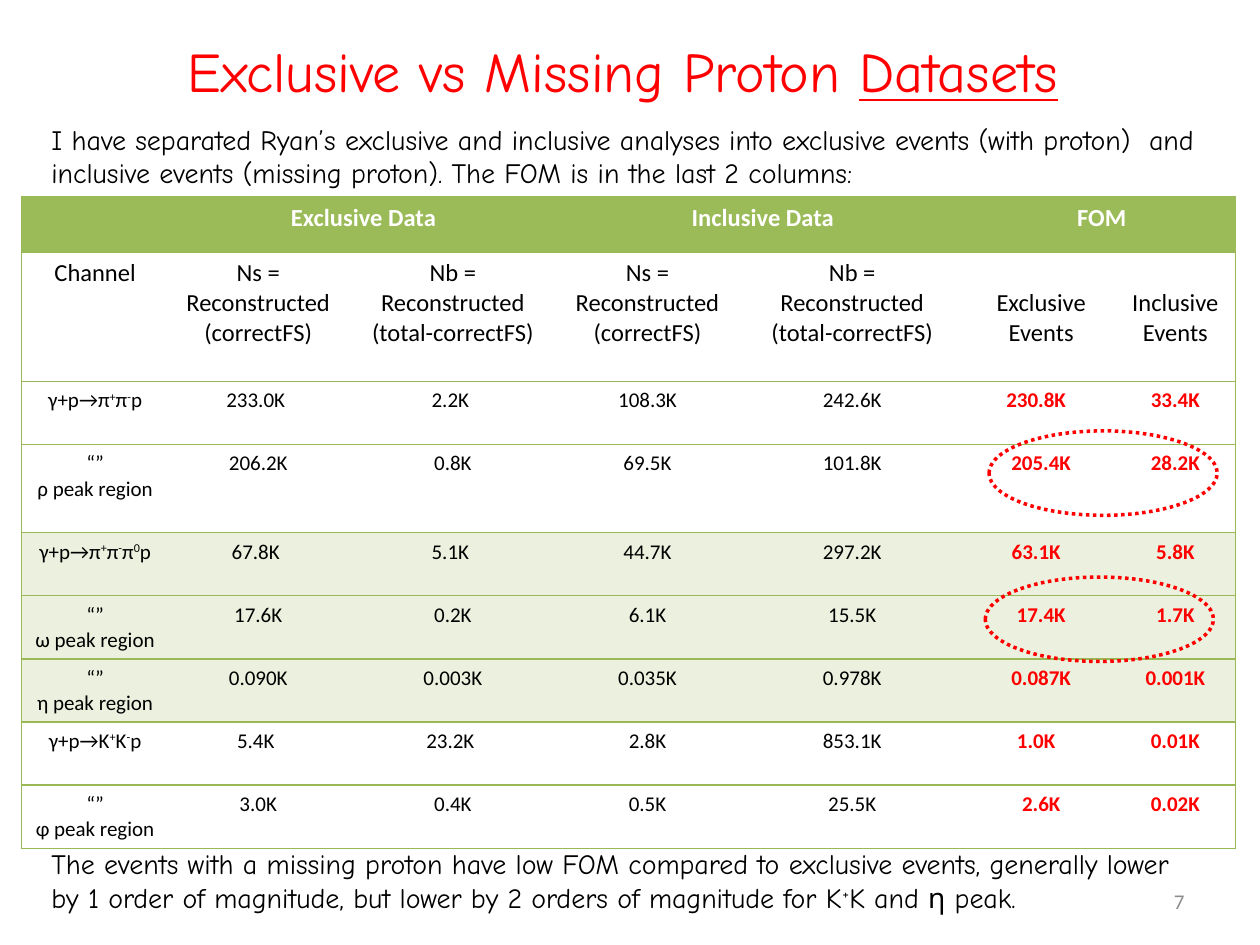
import dataclasses
import pptx
import pptx.dml.color
import pptx.enum.dml
import pptx.enum.shapes
import pptx.enum.text
import pptx.oxml
import pptx.oxml.ns
import pptx.util

ALIGN = pptx.enum.text.PP_ALIGN
ANCHOR = pptx.enum.text.MSO_ANCHOR
PLAIN_STYLE = "{2D5ABB26-0587-4C30-8999-92F81FD0307C}"
CELL = 0.1  # inches: the slide is a grid of 100 columns by 75 rows


@dataclasses.dataclass(frozen=True)
class Theme:
    red: str = "FF0000"
    black: str = "000000"
    white: str = "FFFFFF"
    gray: str = "8C8C8C"
    head: str = "9BBB59"
    band: str = "EBF1DE"
    rule: str = "98B955"
    script: str = "Comic Neue"
    sans: str = "Calibri"
    title: int = 32
    body: int = 16
    label: int = 14
    small: int = 12


THEME = Theme()

WIDTHS = [11.7, 14.2, 16.7, 14.2, 18.3, 11.7, 9.6]
HEIGHTS = [4.4, 10.3, 5, 7, 5, 5, 5, 5, 5]
GROUPS = ["", "Exclusive Data", "Inclusive Data", "FOM"]
SIGNAL = "Ns =\nReconstructed\n(correctFS)"
NOISE = "Nb =\nReconstructed\n(total-correctFS)"
LABELS = ["Channel", SIGNAL, NOISE, SIGNAL, NOISE,
          "Exclusive Events", "Inclusive Events"]
DATA = [
    ["γ+p→π^+^π^-^p", "233.0K", "2.2K", "108.3K", "242.6K", "230.8K", "33.4K"],
    ["“”\nρ peak region", "206.2K", "0.8K", "69.5K", "101.8K", "205.4K", "28.2K"],
    ["γ+p→π^+^π^-^π^0^p", "67.8K", "5.1K", "44.7K", "297.2K", "63.1K", "5.8K"],
    ["“”\nω peak region", "17.6K", "0.2K", "6.1K", "15.5K", "17.4K", "1.7K"],
    ["“”\nη peak region", "0.090K", "0.003K", "0.035K", "0.978K", "0.087K", "0.001K"],
    ["γ+p→K^+^K^-^p", "5.4K", "23.2K", "2.8K", "853.1K", "1.0K", "0.01K"],
    ["“”\nφ peak region", "3.0K", "0.4K", "0.5K", "25.5K", "2.6K", "0.02K"],
]
BANDED = range(4, 7)
FOM_COL = 5
NUDGES = {1: 0.4, 2: 0.4, 5: 0.8}  # extra right inset in channel rows


def units(*counts):
    return [pptx.util.Inches(count * CELL) for count in counts]


def color(code):
    return pptx.dml.color.RGBColor.from_string(code)


def write(frame, text, size, ink, face, align=ALIGN.LEFT, bold=False):
    """Fill a frame, one paragraph a line; every second ^ part is raised."""
    for row, line in enumerate(text.split("\n")):
        para = frame.add_paragraph() if row else frame.paragraphs[0]
        para.alignment = align
        for part, words in enumerate(line.split("^")):
            run = para.add_run()
            run.text = words
            font = run.font
            font.size, font.name, font.bold = pptx.util.Pt(size), face, bold
            font.color.rgb = color(ink)
            if part % 2:
                run._r.get_or_add_rPr().set("baseline", "30000")


def place_text(slide, box, text, size, ink, face, align=ALIGN.LEFT,
               anchor=ANCHOR.TOP):
    frame = slide.shapes.add_textbox(*units(*box)).text_frame
    frame.word_wrap = True
    frame.vertical_anchor = anchor
    write(frame, text, size, ink, face, align)
    return frame


def place_title(slide, box):
    frame = place_text(slide, box, "Exclusive vs Missing Proton ", THEME.title,
                       THEME.red, THEME.script, ALIGN.CENTER, ANCHOR.MIDDLE)
    run = frame.paragraphs[0].add_run()
    run.text = "Datasets"
    run.font.size, run.font.name = pptx.util.Pt(THEME.title), THEME.script
    run.font.color.rgb = color(THEME.red)
    run.font.underline = True


def rule_cell(cell, sides):
    """Draw the named sides of a cell and hide the others."""
    props = cell._tc.get_or_add_tcPr()
    for side in "LRTB":
        fill = (f'<a:solidFill><a:srgbClr val="{THEME.rule}"/></a:solidFill>'
                if side in sides else "<a:noFill/>")
        props.append(pptx.oxml.parse_xml(
            f'<a:ln{side} {pptx.oxml.ns.nsdecls("a")} w="9525">{fill}</a:ln{side}>'))


def style_cell(cell, row, col):
    ends = {0: "L", len(WIDTHS) - 1: "R"}
    rule_cell(cell, "TB" + ends.get(col, ""))
    cell.fill.solid()
    shade = THEME.head if row == 0 else THEME.band if row in BANDED else THEME.white
    cell.fill.fore_color.rgb = color(shade)


def fill_cell(cell, row, col, text):
    size, ink, bold = THEME.small, THEME.black, False
    if row == 0:
        size, ink, bold = THEME.label, THEME.white, True
    elif row == 1:
        size = THEME.label
        if col >= FOM_COL:
            cell.margin_top = pptx.util.Inches(0.29)
    else:
        if col >= FOM_COL:
            ink, bold = THEME.red, True
        if "^" in DATA[row - 2][0] and col in NUDGES:
            cell.margin_right = units(1 + NUDGES[col])[0]
    write(cell.text_frame, text, size, ink, THEME.sans, ALIGN.CENTER, bold)


def place_table(slide, box):
    shape = slide.shapes.add_table(len(HEIGHTS), len(WIDTHS), *units(*box))
    table = shape.table
    table.first_row = table.horz_banding = False
    table._tbl.tblPr.find(pptx.oxml.ns.qn("a:tableStyleId")).text = PLAIN_STYLE
    for line, width in zip(table.columns, units(*WIDTHS)):
        line.width = width
    for line, height in zip(table.rows, units(*HEIGHTS)):
        line.height = height

    heads = [""] * len(WIDTHS)
    heads[1::2] = GROUPS[1:]
    for row, texts in enumerate([heads, LABELS] + DATA):
        for col, text in enumerate(texts):
            cell = table.cell(row, col)
            style_cell(cell, row, col)
            if text:
                fill_cell(cell, row, col, text)
    for col in range(1, len(WIDTHS), 2):
        table.cell(0, col).merge(table.cell(0, col + 1))


def place_rings(slide, box):
    """Circle the FOM pairs of the ρ and ω rows of the table in box."""
    left, top = box[:2]
    for across, down in [(76.8, 18.6), (76.5, 30.2)]:
        ring = slide.shapes.add_shape(pptx.enum.shapes.MSO_SHAPE.OVAL,
                                      *units(left + across, top + down, 18.1, 6.7))
        ring.shadow.inherit = False
        ring.fill.background()
        ring.line.color.rgb = color(THEME.red)
        ring.line.width = pptx.util.Pt(2)
        ring.line.dash_style = pptx.enum.dml.MSO_LINE.ROUND_DOT


def main():
    deck = pptx.Presentation()
    deck.slide_width, deck.slide_height = units(100, 75)
    slide = deck.slides.add_slide(deck.slide_layouts[6])
    grid = (1.7, 15.6, sum(WIDTHS), sum(HEIGHTS))

    place_title(slide, (4.4, 1.7, 90, 7.8))
    place_text(slide, (3.1, 9.2, 94.4, 6.4),
               "I have separated Ryan’s exclusive and inclusive analyses into "
               "exclusive events (with proton)  and inclusive events (missing "
               "proton). The FOM is in the last 2 columns:",
               THEME.body, THEME.black, THEME.script)
    place_table(slide, grid)
    place_text(slide, (3.1, 66.7, 93.2, 6.4),
               "The events with a missing proton have low FOM compared to "
               "exclusive events, generally lower by 1 order of magnitude, but "
               "lower by 2 orders of magnitude for K^+^K and η peak.",
               THEME.body, THEME.black, THEME.script)
    place_text(slide, (71.7, 69.5, 23.3, 4), "7", THEME.small, THEME.gray,
               THEME.sans, ALIGN.RIGHT, ANCHOR.MIDDLE)
    place_rings(slide, grid)
    deck.save("out.pptx")


if __name__ == "__main__":
    main()
